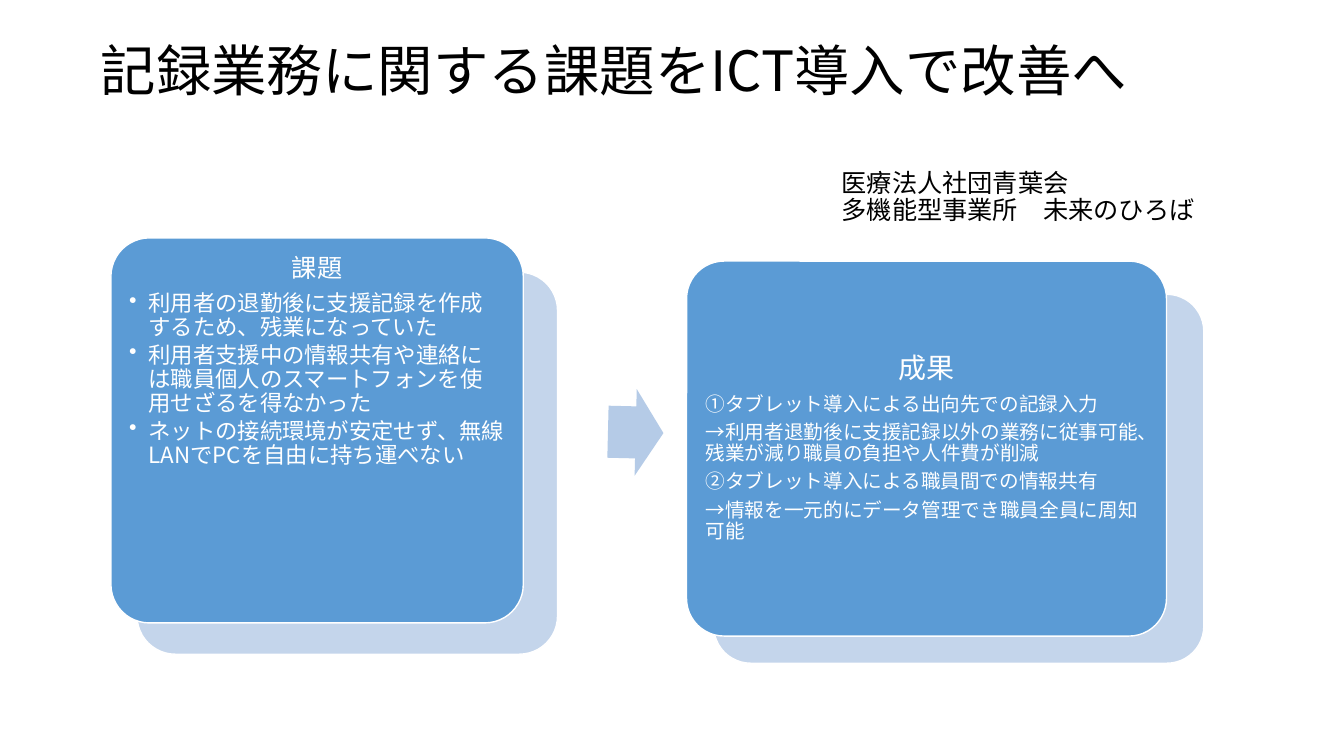
from dataclasses import dataclass

from lxml import etree
from pptx import Presentation
from pptx.dml.color import RGBColor
from pptx.enum.shapes import MSO_SHAPE
from pptx.enum.text import MSO_ANCHOR
from pptx.oxml.ns import qn
from pptx.util import Inches, Pt

ROUND_RECT = MSO_SHAPE.ROUNDED_RECTANGLE
RIGHT_ARROW = MSO_SHAPE.RIGHT_ARROW
TOP, MIDDLE = MSO_ANCHOR.TOP, MSO_ANCHOR.MIDDLE


@dataclass(frozen=True)
class Theme:
    """Colours, font and type sizes of the slide."""
    font: str = "Noto Sans CJK JP"
    ink: str = "000000"
    paper: str = "FFFFFF"
    card: str = "5B9BD5"
    backing: str = "C4D5EB"
    arrow: str = "B5CBE7"
    title: float = 39.6
    byline: float = 18
    issue_head: float = 18
    issue_body: float = 16
    result_head: float = 20
    result_body: float = 14
    line_spacing: float = 0.9
    outline: float = 1


THEME = Theme()

TITLE = "記録業務に関する課題をICT導入で改善へ"
BYLINE = ["医療法人社団青葉会", "多機能型事業所　未来のひろば"]
ISSUES = [
    "利用者の退勤後に支援記録を作成するため、残業になっていた",
    "利用者支援中の情報共有や連絡には職員個人のスマートフォンを使用せざるを得なかった",
    "ネットの接続環境が安定せず、無線LANでPCを自由に持ち運べない",
]
RESULTS = [
    "①タブレット導入による出向先での記録入力",
    "→利用者退勤後に支援記録以外の業務に従事可能、残業が減り職員の負担や人件費が削減",
    "②タブレット導入による職員間での情報共有",
    "→情報を一元的にデータ管理でき職員全員に周知可能",
]


def set_frame(tf, anchor, inset=None):
    """Set wrapping, anchor and, when given, an equal inset on all sides."""
    tf.word_wrap = True
    tf.vertical_anchor = anchor
    if inset is not None:
        for side in ("left", "top", "right", "bottom"):
            setattr(tf, f"margin_{side}", Inches(inset))


def add_bullet(p, indent):
    """Give a paragraph a round bullet with a hanging indent."""
    pPr = p._p.get_or_add_pPr()
    pPr.set("marL", str(Inches(indent)))
    pPr.set("indent", str(-Inches(indent)))
    etree.SubElement(pPr, qn("a:buChar"), char="•")


def add_lines(tf, lines, size, color, gap=0, bullet=None):
    """Append paragraphs of one style, with a gap relative to the type size."""
    for line in lines:
        p = tf.paragraphs[0]
        if p.runs:
            p = tf.add_paragraph()
        formats = {"line_spacing": THEME.line_spacing, "space_after": Pt(size * gap)}
        for name, value in formats.items():
            setattr(p, name, value)
        if bullet:
            add_bullet(p, bullet)
        r = p.add_run()
        r.text = line
        for name, value in {"name": THEME.font, "size": Pt(size)}.items():
            setattr(r.font, name, value)
        r.font.color.rgb = RGBColor.from_string(color)
        etree.SubElement(r._r.get_or_add_rPr(), qn("a:ea"), typeface=THEME.font)


def add_label(s, box, lines, size):
    """Place dark text in a box, centred vertically."""
    tf = s.shapes.add_textbox(*map(Inches, box)).text_frame
    set_frame(tf, MIDDLE)
    add_lines(tf, lines, size, THEME.ink)


def add_block(s, kind, box, fill, adjustments, outline=None):
    """Place a flat filled preset shape, outlined on request."""
    sp = s.shapes.add_shape(kind, *map(Inches, box))
    sp.shadow.inherit = False
    for i, value in enumerate(adjustments):
        sp.adjustments[i] = value
    sp.fill.solid()
    sp.fill.fore_color.rgb = RGBColor.from_string(fill)
    if outline:
        sp.line.color.rgb = RGBColor.from_string(outline)
        sp.line.width = Pt(THEME.outline)
    else:
        sp.line.fill.background()
    return sp


def add_card(s, box, backing, anchor, inset):
    """Place a card over its backing, given as an offset and size, and return its text."""
    x, y = box[:2]
    dx, dy, w, h = backing
    add_block(s, ROUND_RECT, (x + dx, y + dy, w, h), THEME.backing, [0.1], THEME.paper)
    sp = add_block(s, ROUND_RECT, box, THEME.card, [0.1], THEME.paper)
    set_frame(sp.text_frame, anchor, inset)
    return sp.text_frame


def add_issues(s, box):
    """Place the card of issues as a bulleted list."""
    tf = add_card(s, box, (0.26, 0.34, 4.17, 3.79), TOP, 0.07)
    add_lines(tf, ["課題"], THEME.issue_head, THEME.paper, 0.35)
    add_lines(tf, ISSUES, THEME.issue_body, THEME.paper, 0.15, 0.19)


def add_arrow(s, box):
    """Place the slightly turned arrow between the cards."""
    sp = add_block(s, RIGHT_ARROW, box, THEME.arrow, [0.6, 0.5])
    sp.rotation = 1.4


def add_results(s, box):
    """Place the card of results."""
    tf = add_card(s, box, (0.27, 0.33, 4.86, 3.66), MIDDLE, 0.08)
    add_lines(tf, ["成果"], THEME.result_head, THEME.paper, 0.35)
    add_lines(tf, RESULTS, THEME.result_body, THEME.paper, 0.35)


def main():
    """Build the slide and save it."""
    prs = Presentation()
    prs.slide_width, prs.slide_height = Inches(13.33), Inches(7.5)
    s = prs.slides.add_slide(prs.slide_layouts[6])
    add_label(s, (0.9, 0.23, 11.5, 0.99), [TITLE], THEME.title)
    add_issues(s, (1.1, 2.36, 4.09, 3.82))
    add_arrow(s, (6.03, 3.86, 0.55, 0.86))
    add_results(s, (6.81, 2.59, 4.76, 3.72))
    add_label(s, (8.25, 1.52, 4.04, 0.88), BYLINE, THEME.byline)
    prs.save("out.pptx")


if __name__ == "__main__":
    main()
